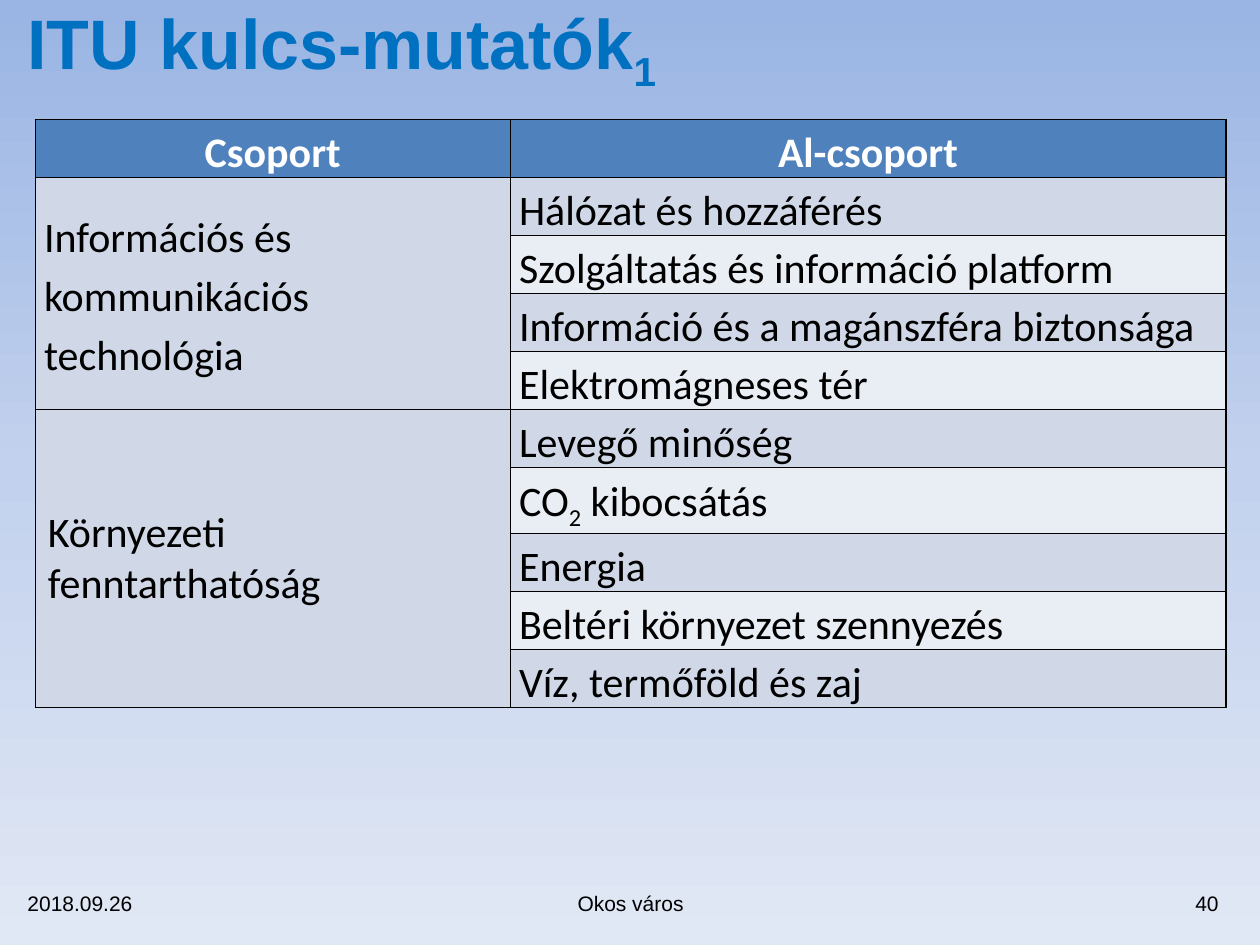
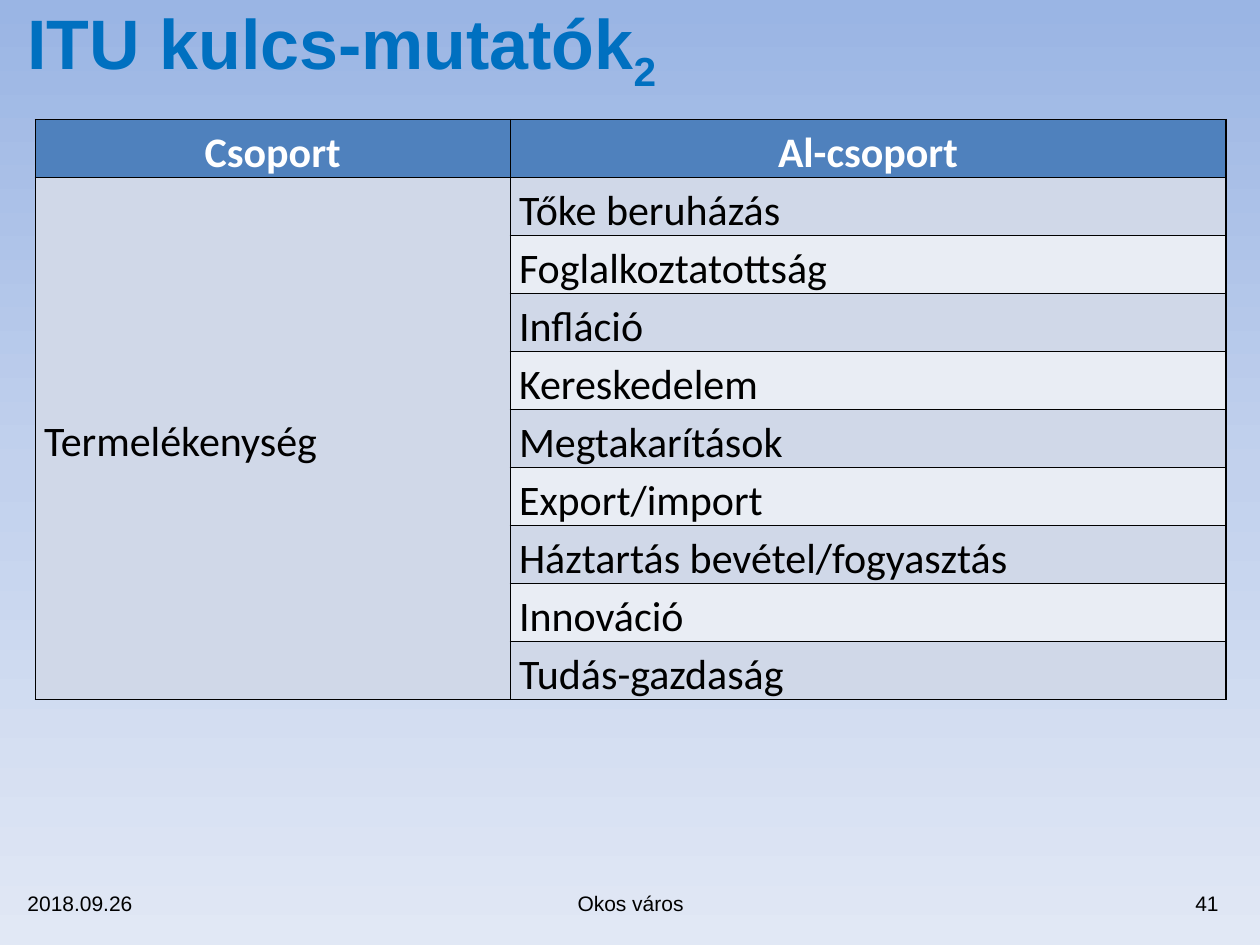
"""Builds two slides with tables of the ITU key indicators."""
from copy import deepcopy

from lxml import etree
from pptx import Presentation
from pptx import util as u
from pptx.dml import color
from pptx.enum import text
from pptx.oxml import ns

Pt = u.Pt
RGBColor = color.RGBColor
ALIGN = text.PP_ALIGN
MIDDLE = text.MSO_ANCHOR.MIDDLE

TITLE_BLUE = RGBColor(0x00, 0x70, 0xC0)
HEADER_BLUE = RGBColor(0x4F, 0x81, 0xBD)
BAND_DARK = RGBColor(0xD0, 0xD8, 0xE8)
BAND_LIGHT = RGBColor(0xE9, 0xED, 0xF4)
BLACK = RGBColor(0, 0, 0)
WHITE = RGBColor(255, 255, 255)
SKY = [
    (0, RGBColor(0x9A, 0xB5, 0xE4)),
    (0.5, RGBColor(0xC2, 0xD1, 0xED)),
    (1, RGBColor(0xE1, 0xE8, 0xF5)),
]

HEADINGS = ["Csoport", "Al-csoport"]
COLUMN_WIDTHS = [271.44, 408.96]
ROW_HEIGHT = 29.52
TIGHT = (5.04, 0, 1.15)
ROOMY = (7.2, 3.6, 1)

SLIDES = [
    ("ITU kulcs-mutatók_1_", "40", [
        ("Információs és kommunikációs technológia", TIGHT, [
            "Hálózat és hozzáférés",
            "Szolgáltatás és információ platform",
            "Információ és a magánszféra biztonsága",
            "Elektromágneses tér",
        ]),
        ("Környezeti fenntarthatóság", ROOMY, [
            "Levegő minőség",
            "CO_2_ kibocsátás",
            "Energia",
            "Beltéri környezet szennyezés",
            "Víz, termőföld és zaj",
        ]),
    ]),
    ("ITU kulcs-mutatók_2_", "41", [
        ("Termelékenység", TIGHT, [
            "Tőke beruházás",
            "Foglalkoztatottság",
            "Infláció",
            "Kereskedelem",
            "Megtakarítások",
            "Export/import",
            "Háztartás bevétel/fogyasztás",
            "Innováció",
            "Tudás-gazdaság",
        ]),
    ]),
]


def write(frame, wording, size, font, ink, bold, align, spacing=1):
    """Writes one paragraph; parts between underscores are subscripts."""
    paragraph = frame.paragraphs[0]
    paragraph.alignment = align
    paragraph.line_spacing = spacing
    for index, part in enumerate(wording.split("_")):
        if not part:
            continue
        run = paragraph.add_run()
        run.text = part
        run.font.size = Pt(size)
        run.font.name = font
        run.font.bold = bold
        run.font.color.rgb = ink
        if index % 2:
            run.font._element.set("baseline", "-25000")


def write_cell(cell, wording, ink, bold, align, layout=TIGHT):
    """Writes the wording into a table cell with the given insets and spacing."""
    side, top, spacing = layout
    cell.margin_left = cell.margin_right = Pt(side)
    cell.margin_top = cell.margin_bottom = Pt(top)
    write(cell.text_frame, wording, 24, "Calibri", ink, bold, align, spacing)


prs = Presentation()
prs.slide_width = Pt(720)
prs.slide_height = Pt(540)

for title, number, groups in SLIDES:
    slide = prs.slides.add_slide(prs.slide_layouts[6])

    sky = slide.background.fill
    sky.gradient()
    sky.gradient_angle = 270
    first_stop = sky.gradient_stops[0]._gs
    first_stop.addnext(deepcopy(first_stop))
    for stop, (position, tint) in zip(sky.gradient_stops, SKY):
        stop.position = position
        stop.color.rgb = tint

    labels = [
        (title, 8.64, 5.76, 702.72, 42.48, 40, TITLE_BLUE, True, ALIGN.LEFT),
        ("2018.09.26", 8.64, 501.84, 141.84, 28.08, 12, BLACK, False, ALIGN.LEFT),
        ("Okos város", 246.96, 501.84, 226.8, 28.08, 12, BLACK, False, ALIGN.CENTER),
        (number, 561.6, 501.84, 141.84, 28.08, 12, BLACK, False, ALIGN.RIGHT),
    ]
    for wording, left, top, width, height, size, ink, bold, align in labels:
        label = slide.shapes.add_textbox(Pt(left), Pt(top), Pt(width), Pt(height))
        label.text_frame.word_wrap = True
        label.text_frame.vertical_anchor = MIDDLE
        write(label.text_frame, wording, size, "Arial", ink, bold, align)

    row_count = 1 + sum(len(subgroups) for _, _, subgroups in groups)
    indicators = slide.shapes.add_table(
        row_count, 2, Pt(20.16), Pt(68.4),
        Pt(sum(COLUMN_WIDTHS)), Pt(row_count * ROW_HEIGHT)).table
    indicators.first_row = False
    indicators.horz_banding = False
    for column, width in zip(indicators.columns, COLUMN_WIDTHS):
        column.width = Pt(width)

    for row_index, row in enumerate(indicators.rows):
        row.height = Pt(ROW_HEIGHT)
        for column_index, cell in enumerate(row.cells):
            properties = cell._tc.get_or_add_tcPr()
            for edge in ("a:lnL", "a:lnR", "a:lnT", "a:lnB"):
                border = etree.SubElement(properties, ns.qn(edge), w=str(Pt(1)))
                paint = etree.SubElement(border, ns.qn("a:solidFill"))
                etree.SubElement(paint, ns.qn("a:srgbClr"), val=str(BLACK))
            cell.fill.solid()
            if row_index == 0:
                cell.fill.fore_color.rgb = HEADER_BLUE
            elif column_index == 0 or row_index % 2:
                cell.fill.fore_color.rgb = BAND_DARK
            else:
                cell.fill.fore_color.rgb = BAND_LIGHT

    for column_index, heading in enumerate(HEADINGS):
        write_cell(indicators.cell(0, column_index), heading, WHITE, True, ALIGN.CENTER)

    start = 1
    for group, layout, subgroups in groups:
        group_cell = indicators.cell(start, 0)
        group_cell.merge(indicators.cell(start + len(subgroups) - 1, 0))
        group_cell.vertical_anchor = MIDDLE
        write_cell(group_cell, group, BLACK, False, ALIGN.LEFT, layout)
        for row_index, subgroup in enumerate(subgroups, start):
            write_cell(indicators.cell(row_index, 1), subgroup, BLACK, False, ALIGN.JUSTIFY)
        start += len(subgroups)

prs.save("out.pptx")
